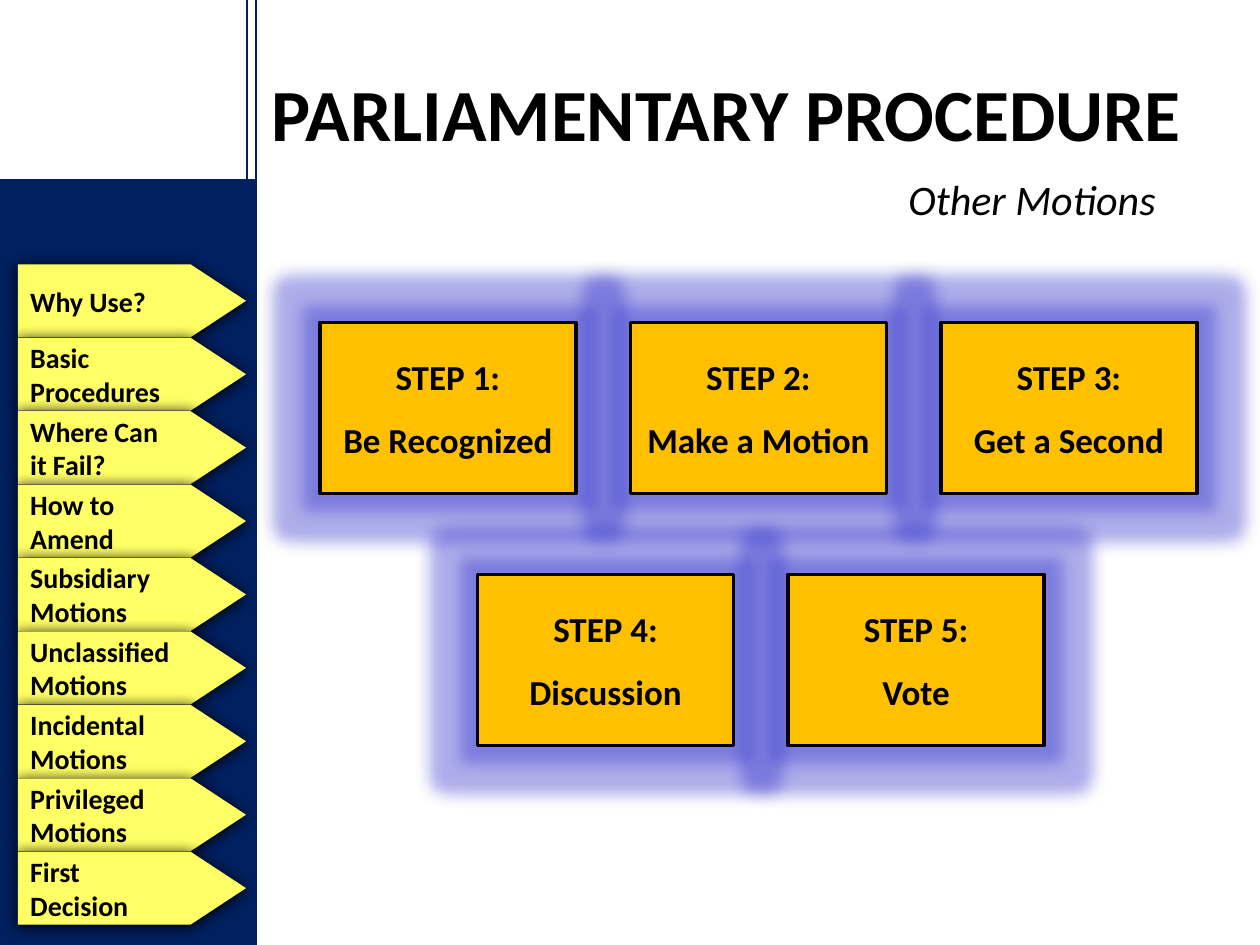
import pptx
import pptx.dml.color
import pptx.enum.shapes
import pptx.enum.text
import pptx.oxml
import pptx.oxml.ns
import pptx.util

Cm = pptx.util.Cm
Pt = pptx.util.Pt
RGBColor = pptx.dml.color.RGBColor
MSO_SHAPE = pptx.enum.shapes.MSO_SHAPE
PP_ALIGN = pptx.enum.text.PP_ALIGN
MSO_ANCHOR = pptx.enum.text.MSO_ANCHOR

NAVY = RGBColor(0x00, 0x20, 0x60)
BLACK = RGBColor(0x00, 0x00, 0x00)
AMBER = RGBColor(0xFF, 0xC0, 0x00)
YELLOW = RGBColor(0xFF, 0xFF, 0x65)
BLUE = RGBColor(0x33, 0x33, 0xCC)

NAMESPACE = pptx.oxml.ns.nsdecls("a")
TOPICS = [
    "Why Use?", "Basic Procedures", "Where Can it Fail?", "How to Amend",
    "Subsidiary Motions", "Unclassified Motions", "Incidental Motions",
    "Privileged Motions", "First Decision",
]
STEP_ROWS = [
    (6.45, 6.5, ["Be Recognized", "Make a Motion", "Get a Second"]),
    (9.63, 11.58, ["Discussion", "Vote"]),
]
STEP_PITCH = 6.26
TOPIC_PITCH = 1.48


def write_text(text_frame, text, size=16, bold=False, italic=False,
               align=PP_ALIGN.LEFT, anchor=MSO_ANCHOR.TOP, gap=0):
    text_frame.word_wrap = True
    text_frame.vertical_anchor = anchor
    for index, line in enumerate(text.split("\n")):
        paragraph = text_frame.paragraphs[0] if index == 0 else text_frame.add_paragraph()
        paragraph.alignment = align
        if index:
            paragraph.space_before = Pt(gap)
        run = paragraph.add_run()
        run.text = line
        run.font.name = "Calibri"
        run.font.size = Pt(size)
        run.font.bold = bold
        run.font.italic = italic
        run.font.color.rgb = BLACK


class SlideBuilder:
    def __init__(self, slide):
        self.slide = slide

    def add_effect(self, shape, name, color, alpha, **attributes):
        settings = " ".join(f'{key}="{int(value)}"' for key, value in attributes.items())
        effect = pptx.oxml.parse_xml(
            f'<a:{name} {NAMESPACE} {settings}><a:srgbClr val="{color}">'
            f'<a:alpha val="{alpha * 1000}"/></a:srgbClr></a:{name}>'
        )
        shape.element.spPr.find(pptx.oxml.ns.qn("a:effectLst")).append(effect)

    def add_block(self, kind, left, top, width, height, fill):
        shape = self.slide.shapes.add_shape(kind, Cm(left), Cm(top), Cm(width), Cm(height))
        shape.shadow.inherit = False
        shape.fill.solid()
        shape.fill.fore_color.rgb = fill
        shape.line.fill.background()
        return shape

    def add_rule(self, x, bottom):
        connector = self.slide.shapes.add_connector(
            pptx.enum.shapes.MSO_CONNECTOR.STRAIGHT, Cm(x), Cm(bottom), Cm(x), Cm(0))
        connector.line.color.rgb = NAVY
        connector.line.width = Pt(0.75)
        connector.element.spPr.append(pptx.oxml.parse_xml(f"<a:effectLst {NAMESPACE}/>"))

    def add_label(self, text, left, top, width, height, **text_format):
        box = self.slide.shapes.add_textbox(Cm(left), Cm(top), Cm(width), Cm(height))
        write_text(box.text_frame, text, **text_format)

    def add_step(self, text, left, top):
        shape = self.add_block(MSO_SHAPE.RECTANGLE, left, top, 5.16, 3.45, AMBER)
        shape.line.color.rgb = BLACK
        shape.line.width = Pt(2)
        self.add_effect(shape, "glow", BLUE, 40, rad=Pt(18))
        write_text(shape.text_frame, text, size=20, bold=True,
                   align=PP_ALIGN.CENTER, anchor=MSO_ANCHOR.MIDDLE, gap=12)

    def add_topic(self, text, top):
        shape = self.add_block(MSO_SHAPE.RIGHT_ARROW, 0.36, top, 4.6, 1.47, YELLOW)
        shape.adjustments[0] = 1
        shape.adjustments[1] = 0.76
        self.add_effect(shape, "outerShdw", BLACK, 100,
                        blurRad=Pt(8.5), dist=Pt(1), dir=90 * 60000)
        write_text(shape.text_frame, text, bold=True, anchor=MSO_ANCHOR.MIDDLE)


def main():
    presentation = pptx.Presentation()
    presentation.slide_width = Cm(25.4)
    presentation.slide_height = Cm(19.05)
    builder = SlideBuilder(presentation.slides.add_slide(presentation.slide_layouts[6]))

    builder.add_block(MSO_SHAPE.RECTANGLE, 0, 3.61, 5.18, 15.44, NAVY)
    for x in (5.16, 4.98):
        builder.add_rule(x, 4.7)
    builder.add_label("PARLIAMENTARY PROCEDURE", 5.23, 1.24, 19.43, 2.06, size=42, bold=True)
    builder.add_label("Other Motions", 12.73, 3.38, 10.82, 1.3, size=24, italic=True,
                      align=PP_ALIGN.RIGHT)

    number = 1
    for left, top, actions in STEP_ROWS:
        for column, action in enumerate(actions):
            builder.add_step(f"STEP {number}:\n{action}", left + column * STEP_PITCH, top)
            number += 1

    for index, topic in enumerate(TOPICS):
        builder.add_topic(topic, 5.33 + index * TOPIC_PITCH)

    presentation.save("out.pptx")


if __name__ == "__main__":
    main()
